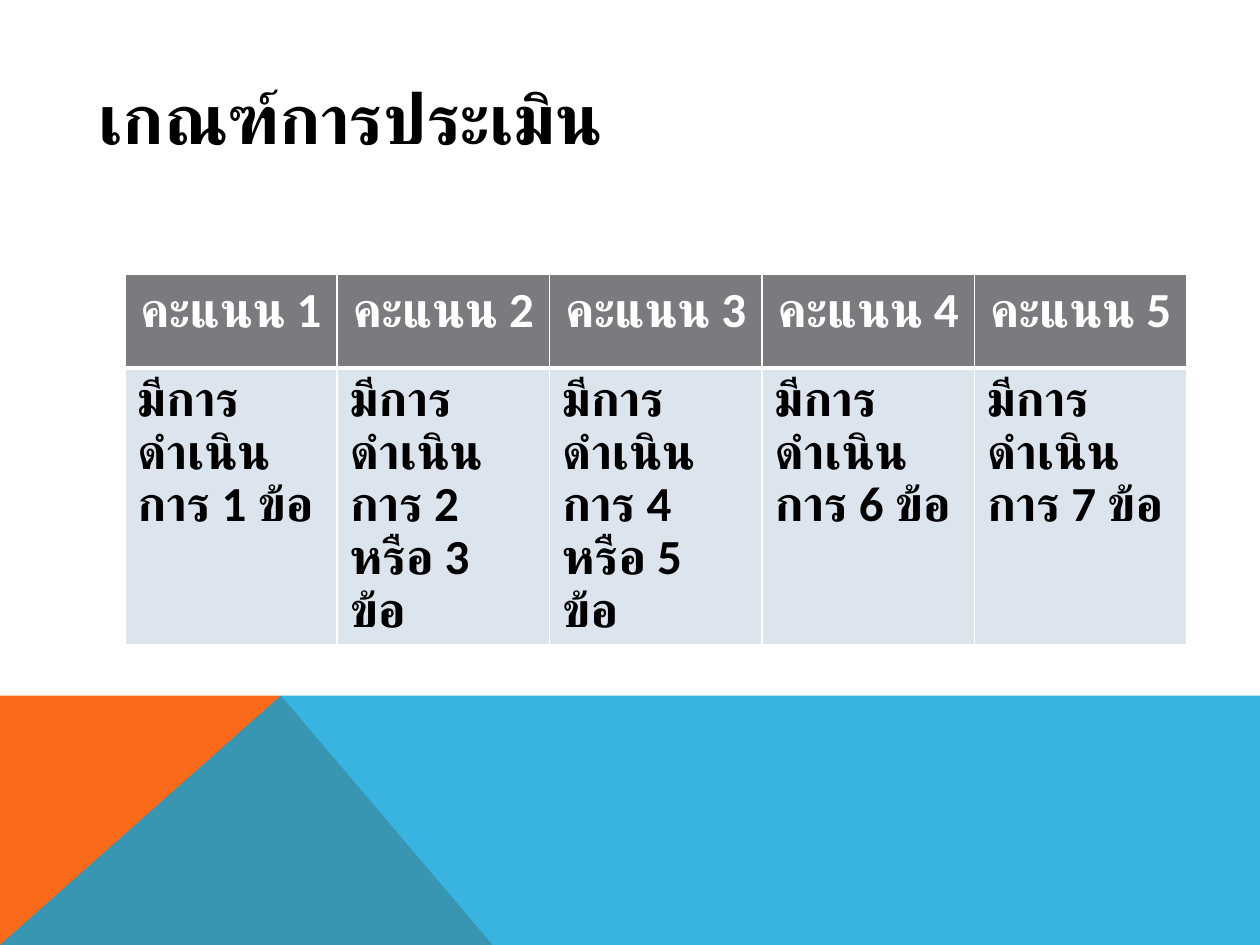
from lxml.etree import SubElement
from pptx import Presentation
from pptx.dml.color import RGBColor
from pptx.enum.lang import MSO_LANGUAGE_ID
from pptx.enum.text import MSO_ANCHOR, PP_ALIGN
from pptx.oxml.ns import qn
from pptx.util import Inches, Pt

TITLE = "เกณฑ์การประเมิน"
CRITERIA = [
    ("คะแนน 1", "มีการดำเนินการ 1 ข้อ"),
    ("คะแนน 2", "มีการดำเนินการ 2 หรือ 3 ข้อ"),
    ("คะแนน 3", "มีการดำเนินการ 4 หรือ 5 ข้อ"),
    ("คะแนน 4", "มีการดำเนินการ 6 ข้อ"),
    ("คะแนน 5", "มีการดำเนินการ 7 ข้อ"),
]
COLORS = {
    "orange": "F96A1B", "blue": "08A1D9", "header": "797B7E",
    "body": "DCE5EE", "white": "FFFFFF", "black": "000000",
}
# Footer bands: colour, opacity in percent, corner points
BANDS = [
    ("orange", 100, [(0, 7.5), (0, 5.52), (2.23, 5.52), (3.91, 7.5)]),
    ("blue", 80, [(0, 7.5), (2.23, 5.52), (10, 5.52), (10, 7.5)]),
]
ROW_HEIGHTS = [0.74, 2.2]
TABLE_LEFT, TABLE_TOP, TABLE_WIDTH = 0.99, 2.18, 8.43
BODY_LINE_SPACING, BODY_RIGHT_MARGIN = 0.88, 0.15


def rgb(name):
    return RGBColor.from_string(COLORS[name])


def add_text(paragraph, text, size, font, color):
    run = paragraph.add_run()
    run.text = text
    run.font.size = Pt(size)
    run.font.bold = True
    run.font.name = font
    run.font.color.rgb = rgb(color)
    run.font.language_id = MSO_LANGUAGE_ID.THAI
    SubElement(run.font._element, qn("a:cs"), typeface=font)


def add_border(cell, side, width):
    line = SubElement(cell._tc.get_or_add_tcPr(), qn(f"a:ln{side}"), w=str(Pt(width)))
    fill = SubElement(line, qn("a:solidFill"))
    SubElement(fill, qn("a:srgbClr"), val=COLORS["white"])


presentation = Presentation()
presentation.slide_width, presentation.slide_height = Inches(10), Inches(7.5)
slide = presentation.slides.add_slide(presentation.slide_layouts[6])

# Footer bands
for color, opacity, points in BANDS:
    corners = [(Inches(x), Inches(y)) for x, y in points]
    outline = slide.shapes.build_freeform(*corners[0])
    outline.add_line_segments(corners[1:], close=True)
    band = outline.convert_to_shape()
    band.shadow.inherit = False
    band.line.fill.background()
    band.fill.solid()
    band.fill.fore_color.rgb = rgb(color)
    if opacity < 100:
        tint = band._element.spPr.find(qn("a:solidFill"))[0]
        SubElement(tint, qn("a:alpha"), val=str(opacity * 1000))

# Title
title = slide.shapes.add_textbox(Inches(0.68), Inches(0.52), Inches(8.27), Inches(0.81))
title.text_frame.word_wrap = True
title.text_frame.vertical_anchor = MSO_ANCHOR.MIDDLE
add_text(title.text_frame.paragraphs[0], TITLE, 40, "Lato", "black")

# Scoring table
scores = slide.shapes.add_table(
    len(ROW_HEIGHTS), len(CRITERIA), Inches(TABLE_LEFT), Inches(TABLE_TOP),
    Inches(TABLE_WIDTH), Inches(sum(ROW_HEIGHTS))).table
for row, height in zip(scores.rows, ROW_HEIGHTS):
    row.height = Inches(height)
for column, criterion in enumerate(CRITERIA):
    scores.columns[column].width = Inches(TABLE_WIDTH / len(CRITERIA))
    for row, text in enumerate(criterion):
        is_header = row == 0
        cell = scores.cell(row, column)
        thick_side = "B" if is_header else "T"
        for side in "LRTB":
            add_border(cell, side, 3 if side == thick_side else 1)
        cell.fill.solid()
        cell.fill.fore_color.rgb = rgb("header" if is_header else "body")
        paragraph = cell.text_frame.paragraphs[0]
        paragraph.alignment = PP_ALIGN.CENTER if is_header else PP_ALIGN.LEFT
        if not is_header:
            cell.margin_right = Inches(BODY_RIGHT_MARGIN)
            paragraph.line_spacing = BODY_LINE_SPACING
        add_text(paragraph, text, 28, "Calibri", "white" if is_header else "black")

presentation.save("out.pptx")
